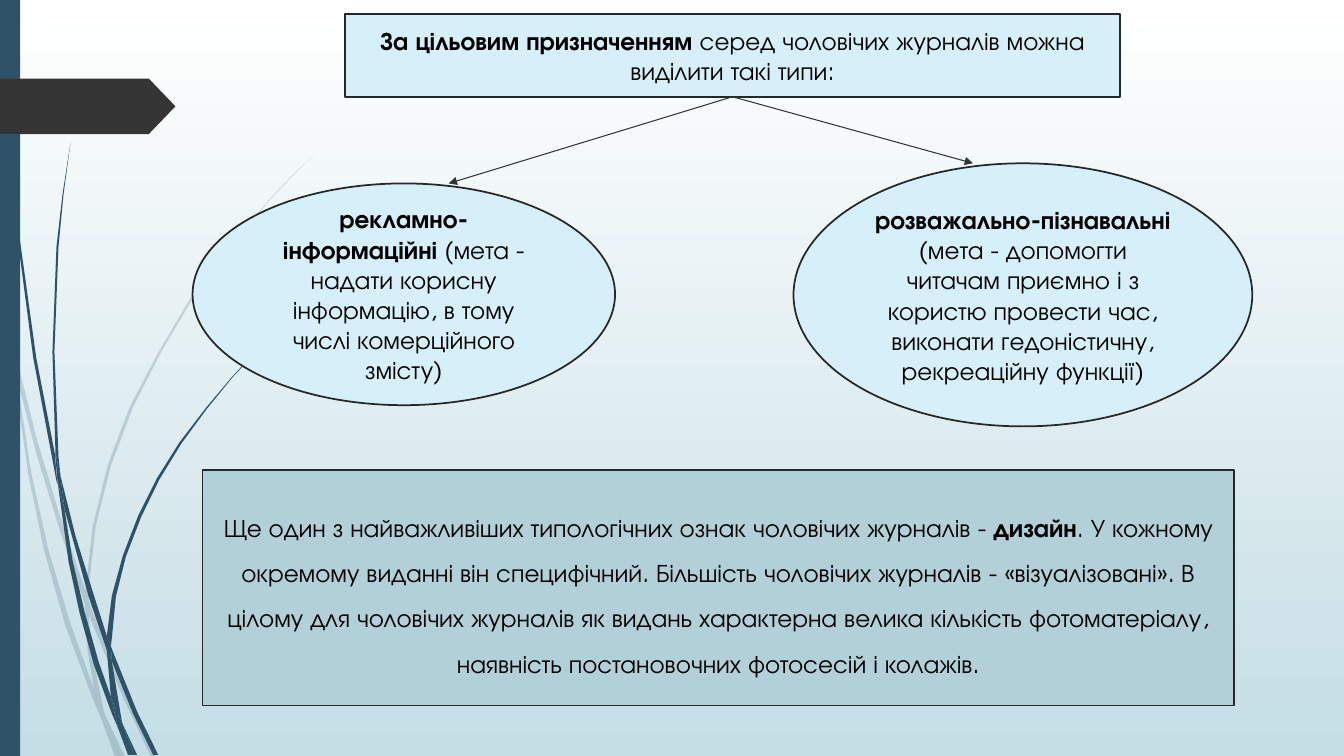
from lxml import etree
from pptx import Presentation
from pptx.dml.color import RGBColor
from pptx.enum.shapes import MSO_CONNECTOR, MSO_SHAPE
from pptx.enum.text import MSO_ANCHOR, MSO_AUTO_SIZE, PP_ALIGN
from pptx.oxml.ns import qn
from pptx.util import Inches, Pt

RECTANGLE, ELLIPSE, TAG = MSO_SHAPE.RECTANGLE, MSO_SHAPE.OVAL, MSO_SHAPE.PENTAGON
STRAIGHT = MSO_CONNECTOR.STRAIGHT
MIDDLE, CENTER, NO_FIT = MSO_ANCHOR.MIDDLE, PP_ALIGN.CENTER, MSO_AUTO_SIZE.NONE
BOTTOM_SIDE = 2

WHITE = RGBColor(0xFF, 0xFF, 0xFF)
BLACK = RGBColor(0x00, 0x00, 0x00)
MIST = RGBColor(0xC5, 0xDE, 0xE5)
NAVY = RGBColor(0x2E, 0x53, 0x69)
CHARCOAL = RGBColor(0x35, 0x35, 0x35)
OUTLINE = RGBColor(0x27, 0x27, 0x27)
ARROW = RGBColor(0x33, 0x33, 0x33)
PALE_BLUE = RGBColor(0xD6, 0xF0, 0xFA)
GREY_BLUE = RGBColor(0xB2, 0xD0, 0xD8)
FONT = "TeX Gyre Adventor"

# Outlines of the stem pieces, in inches from the corner of the backdrop
FAINT_STEMS = [
    [(0.11, 3.5), (0.09, 3.22), (0, 2.82), (0, 2.99), (0.1, 3.44)],
    [(0.58, 5.22), (0.84, 5.99), (0.85, 5.86), (0.62, 5.2), (0.36, 4.34), (0.14, 3.45),
     (0.17, 3.76), (0.36, 4.5)],
    [(0.92, 6.07), (0.88, 5.96), (0.88, 6.1), (1.23, 6.94), (1.5, 7.51), (1.55, 7.51),
     (1.27, 6.92)],
    [(1.19, 7.51), (1.24, 7.51), (1.05, 7.11)],
    [(0.93, 6.83), (0.7, 6.19), (0.48, 5.45), (0.31, 4.69), (0.17, 3.76), (0.11, 3.5),
     (0.28, 4.7), (0.44, 5.47), (0.65, 6.21), (0.92, 6.93), (1.01, 7.14), (0.99, 7.07)],
    [(0.84, 5.99), (0.87, 6.46), (0.93, 6.83), (0.96, 6.92), (1.05, 7.11), (1.03, 7.06),
     (0.91, 6.46), (0.88, 6.1), (0.88, 6.08)],
    [(0.88, 5.84), (0.95, 5.22), (1.1, 4.62), (1.32, 4.04), (1.6, 3.49), (1.92, 2.95),
     (2.29, 2.45), (2.68, 1.98), (2.9, 1.75), (3.12, 1.53), (2.89, 1.75), (2.68, 1.97),
     (2.28, 2.44), (1.9, 2.94), (1.58, 3.48), (1.29, 4.03), (1.07, 4.61), (0.92, 5.22),
     (0.85, 5.84), (0.85, 5.86), (0.88, 5.96)],
    [(1.01, 7.14), (1.14, 7.51), (1.19, 7.51)],
    [(0.88, 6.08), (0.88, 6.1), (0.88, 5.96), (0.85, 5.86), (0.84, 5.99)],
    [(0.96, 6.92), (0.93, 6.83), (0.99, 7.07), (1.01, 7.14), (1.19, 7.51), (1.05, 7.11)],
]
DARK_STEMS = [
    [(0.07, 1.1), (0.17, 2.33), (0.33, 3.55), (0.56, 4.77), (0.57, 4.81), (0.55, 4.57),
     (0.55, 4.53), (0.36, 3.55), (0.19, 2.32), (0.08, 1.09), (0.05, 0.48), (0.04, 0),
     (0.03, 0), (0.04, 0.48)],
    [(0.88, 5.92), (1.06, 6.45), (1.06, 6.31), (0.93, 5.9), (0.75, 5.32), (0.6, 4.72),
     (0.64, 5.05)],
    [(1.13, 6.49), (1.1, 6.41), (1.11, 6.56), (1.32, 7.08), (1.52, 7.49), (1.57, 7.49),
     (1.36, 7.06)],
    [(1.1, 6.91), (0.98, 6.57), (0.84, 6.07), (0.72, 5.56), (0.64, 5.05), (0.57, 4.77),
     (0.68, 5.57), (0.79, 6.08), (0.93, 6.59), (1.11, 7.08), (1.17, 7.22), (1.16, 7.17)],
    [(0.6, 4.72), (0.58, 4.53), (0.54, 3.49), (0.58, 2.45), (0.63, 1.93), (0.7, 1.41),
     (0.62, 1.93), (0.56, 2.45), (0.52, 3.49), (0.55, 4.49)],
    [(1.33, 7.49), (1.36, 7.49), (1.22, 7.19)],
    [(0.57, 4.77), (0.64, 5.05), (0.6, 4.72), (0.55, 4.49), (0.55, 4.53)],
    [(1.11, 6.33), (1.15, 5.92), (1.25, 5.52), (1.4, 5.13), (1.58, 4.76), (1.8, 4.4),
     (2.05, 4.06), (2.31, 3.74), (2.45, 3.59), (2.6, 3.44), (2.45, 3.58), (2.31, 3.73),
     (2.04, 4.05), (1.78, 4.39), (1.56, 4.74), (1.37, 5.12), (1.22, 5.51), (1.11, 5.91),
     (1.06, 6.31), (1.1, 6.41)],
    [(1.17, 7.22), (1.27, 7.49), (1.31, 7.49)],
    [(1.06, 6.45), (1.1, 6.91), (1.16, 7.06), (1.22, 7.19), (1.21, 7.16), (1.11, 6.56),
     (1.09, 6.51)],
    [(1.06, 6.45), (1.09, 6.51), (1.11, 6.56), (1.1, 6.41), (1.06, 6.31)],
    [(1.16, 7.06), (1.1, 6.91), (1.16, 7.17), (1.17, 7.22), (1.3, 7.49), (1.33, 7.49),
     (1.22, 7.19)],
]


def paint(shape, color, outlined=False):
    shape.shadow.inherit = False
    shape.fill.solid()
    shape.fill.fore_color.rgb = color
    if outlined:
        shape.line.color.rgb = OUTLINE
        shape.line.width = Pt(1.25)
    else:
        shape.line.fill.background()


def add_stem(slide, left, top, outline, opacity):
    points = [(Inches(left + x), Inches(top + y)) for x, y in outline]
    builder = slide.shapes.build_freeform(*points[0], scale=1.0)
    builder.add_line_segments(points[1:], close=True)
    stem = builder.convert_to_shape()
    paint(stem, NAVY)
    if opacity < 100:
        color = stem._element.spPr.find(qn("a:solidFill"))[0]
        etree.SubElement(color, qn("a:alpha"), val=str(opacity * 1000))


def add_backdrop(slide, left, top, height):
    """Gradient, curved stems, side bar and page tag."""
    background = slide.background.fill
    background.gradient()
    background.gradient_angle = 270
    for stop, position, color in zip(background.gradient_stops, (0, 1), (WHITE, MIST)):
        stop.position = position
        stop.color.rgb = color
    for stems, opacity in ((FAINT_STEMS, 20), (DARK_STEMS, 100)):
        for outline in stems:
            add_stem(slide, left, top, outline, opacity)
    side_bar = slide.shapes.add_shape(
        RECTANGLE, Inches(left), Inches(top), Inches(0.2), Inches(height))
    paint(side_bar, NAVY)
    page_tag = slide.shapes.add_shape(
        TAG, Inches(left), Inches(top + 0.78), Inches(1.74), Inches(0.55))
    page_tag.adjustments[0] = 0.48
    paint(page_tag, CHARCOAL)


def write(shape, runs, spacing=1.0):
    """Fill the shape with centred (text, bold) runs."""
    frame = shape.text_frame
    frame.word_wrap = True
    frame.auto_size = NO_FIT
    frame.vertical_anchor = MIDDLE
    paragraph = frame.paragraphs[0]
    paragraph.alignment = CENTER
    paragraph.line_spacing = spacing
    for text, bold in runs:
        run = paragraph.add_run()
        run.text = text
        run.font.name = FONT
        run.font.size = Pt(18)
        run.font.bold = bold
        run.font.color.rgb = BLACK


def add_heading(slide, left, top, width, height):
    heading = slide.shapes.title
    heading.left, heading.top = Inches(left), Inches(top)
    heading.width, heading.height = Inches(width), Inches(height)
    paint(heading, PALE_BLUE, outlined=True)
    write(heading, [("За цільовим призначенням ", True),
                    ("серед чоловічих журналів можна виділити такі типи:", False)])
    return heading


def add_panel(slide, preset, box, color, runs, spacing=1.0):
    panel = slide.shapes.add_shape(preset, *map(Inches, box))
    paint(panel, color, outlined=True)
    write(panel, runs, spacing)


def add_arrow(slide, heading, x, y):
    """Arrow from the bottom of the heading to a point."""
    arrow = slide.shapes.add_connector(STRAIGHT, 0, 0, Inches(x), Inches(y))
    arrow.begin_connect(heading, BOTTOM_SIDE)
    arrow.line.color.rgb = ARROW
    arrow.line.width = Pt(0.75)
    etree.SubElement(arrow.line._get_or_add_ln(), qn("a:tailEnd"), type="triangle")
    etree.SubElement(arrow._element.spPr, qn("a:effectLst"))


def add_magazine_types(slide, heading, left, top):
    """Two ellipses, each with the arrow that leads to it."""
    magazine_types = [
        ((left, top + 0.2, 4.19, 2.2), (2.54, 0.2), "рекламно-інформаційні",
         " (мета - надати корисну інформацію, в тому числі комерційного змісту)"),
        ((left + 5.96, top, 4.55, 2.61), (7.74, 0), "розважально-пізнавальні",
         " (мета - допомогти читачам приємно і з користю провести час, "
         "виконати гедоністичну, рекреаційну функції)"),
    ]
    for box, (arrow_x, arrow_y), name, purpose in magazine_types:
        add_panel(slide, ELLIPSE, box, PALE_BLUE, [(name, True), (purpose, False)])
        add_arrow(slide, heading, left + arrow_x, top + arrow_y)


def add_design_note(slide, left, top, width, height):
    add_panel(slide, RECTANGLE, (left, top, width, height), GREY_BLUE, [
        ("Ще один з найважливіших типологічних ознак чоловічих журналів - ", False),
        ("дизайн", True),
        (". У кожному окремому виданні він специфічний. Більшість чоловічих журналів - "
         "«візуалізовані». В цілому для чоловічих журналів як видань характерна велика "
         "кількість фотоматеріалу, наявність постановочних фотосесій і колажів.", False),
    ], spacing=1.5)


def main():
    deck = Presentation()
    deck.slide_width, deck.slide_height = Inches(13.33), Inches(7.5)
    slide = deck.slides.add_slide(deck.slide_layouts[5])
    add_backdrop(slide, 0, 0, 7.5)
    heading = add_heading(slide, 3.42, 0.14, 7.69, 0.82)
    add_magazine_types(slide, heading, 1.91, 1.62)
    add_design_note(slide, 2.01, 4.66, 10.23, 2.34)
    deck.save("out.pptx")


if __name__ == "__main__":
    main()
